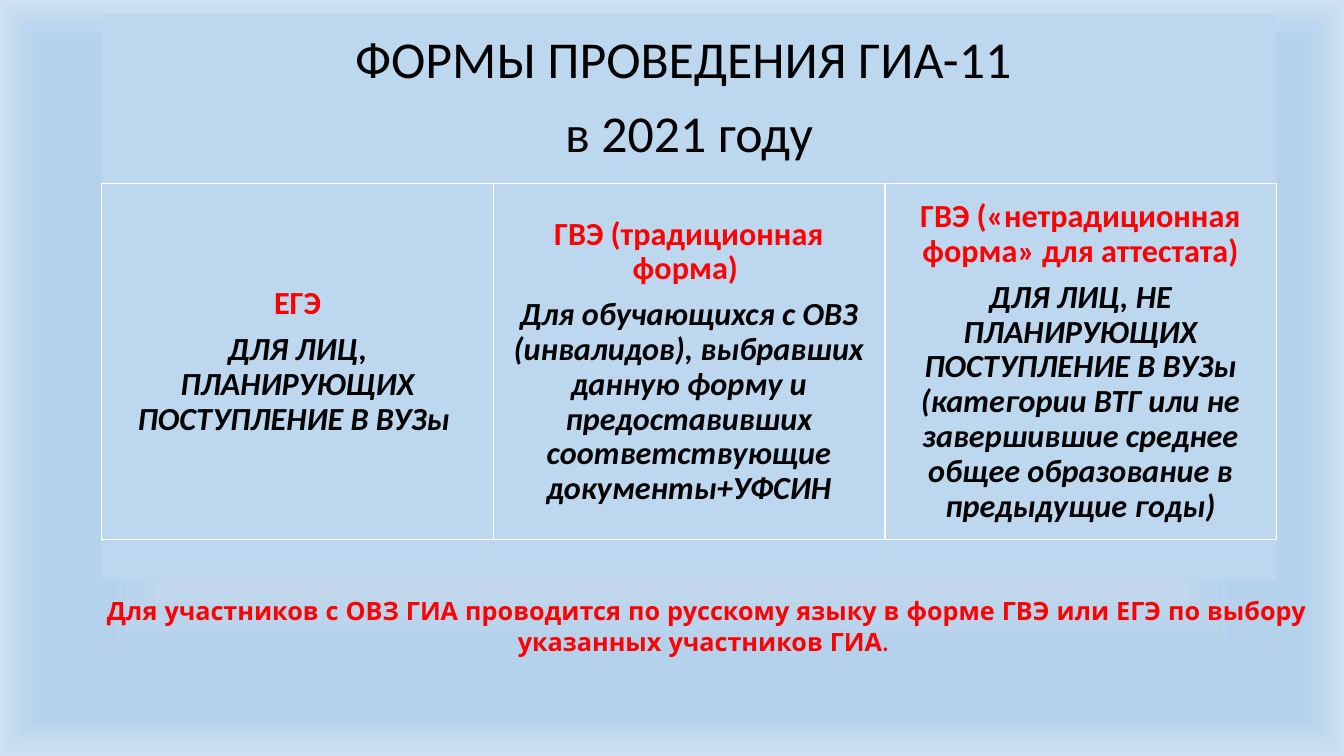
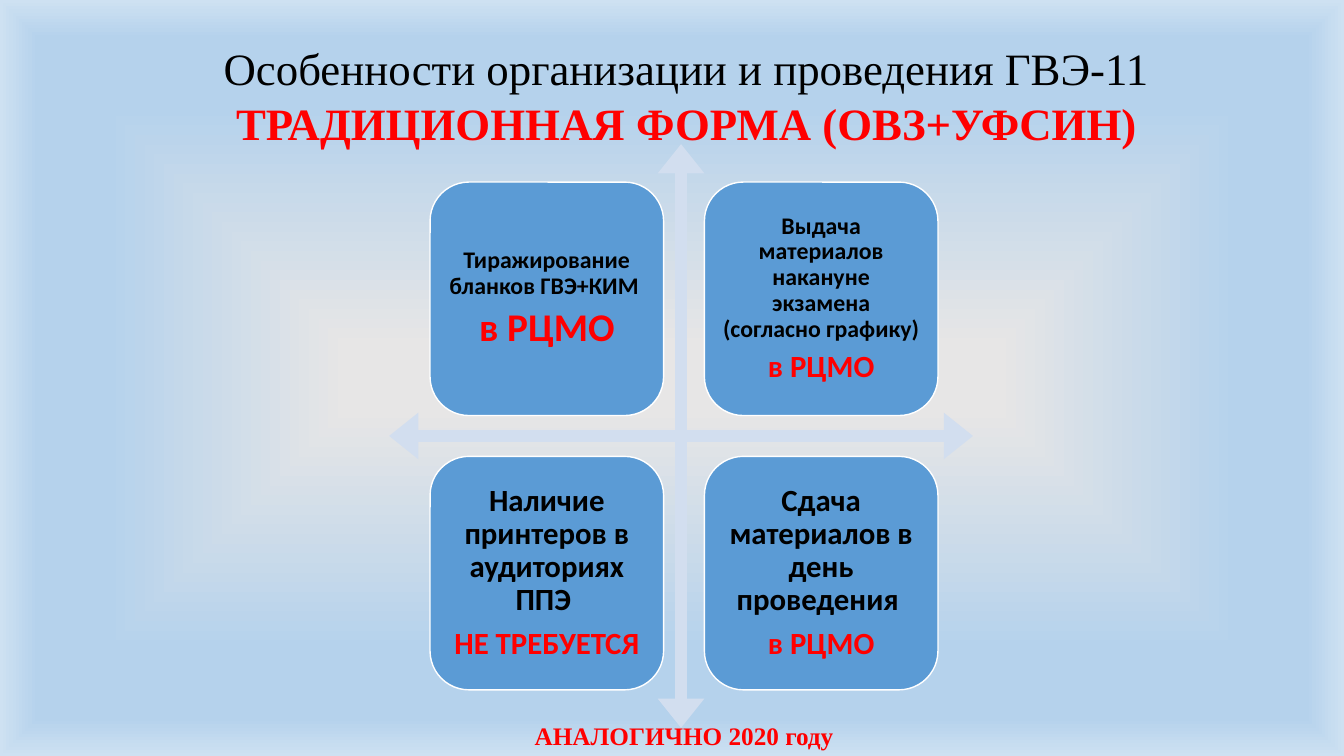
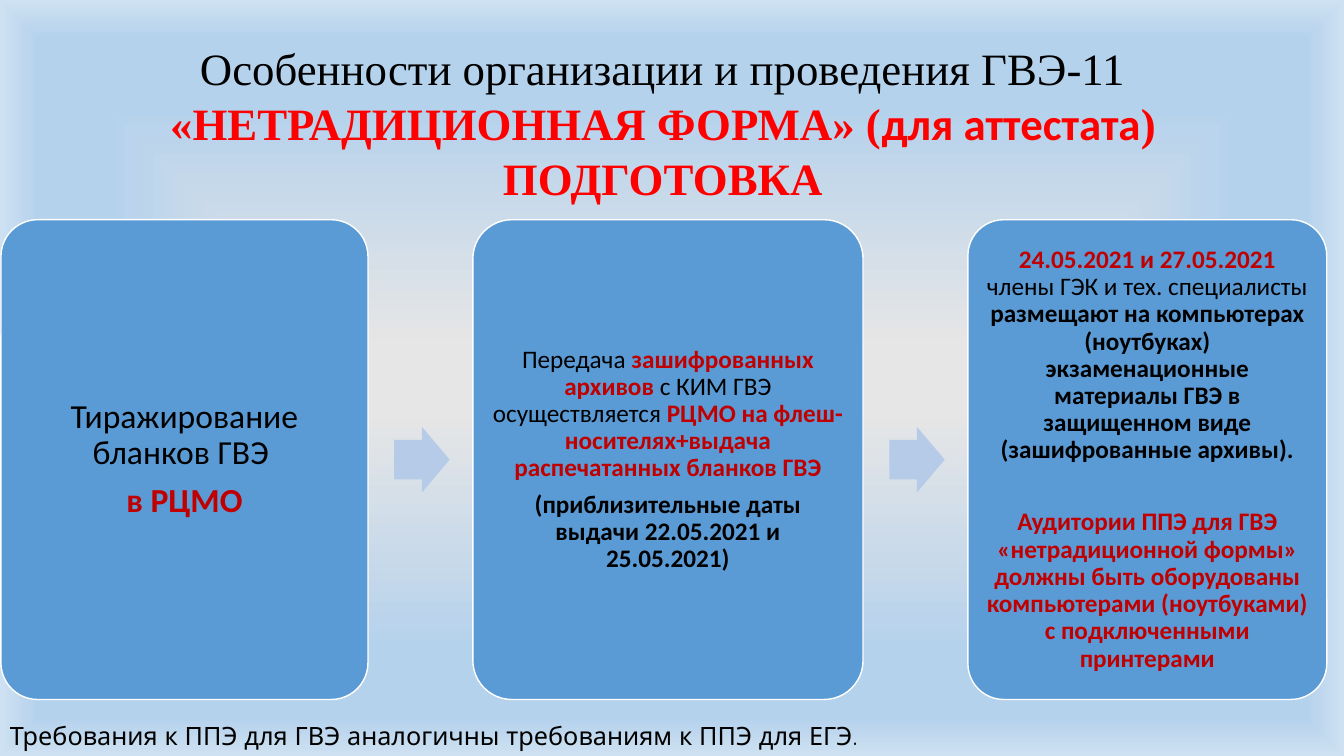
import pptx
import pptx.util
import pptx.dml.color
import pptx.enum.shapes
import pptx.enum.text
import pptx.oxml
import pptx.oxml.ns
from dataclasses import dataclass

Inch = pptx.util.Inches
Pt = pptx.util.Pt
Kind = pptx.enum.shapes.MSO_SHAPE
Align = pptx.enum.text.PP_ALIGN
Anchor = pptx.enum.text.MSO_ANCHOR


@dataclass(frozen=True)
class Theme:
    black: str = "000000"
    white: str = "FFFFFF"
    red: str = "FF0000"
    dark: str = "C00000"
    panel: str = "BDD7EE"
    card: str = "5B9BD5"
    cross: str = "D2DEEF"
    arrow: str = "B5CBE7"
    stops: tuple = ((8, "E7E6E6"), (72, "B5D2EC"), (90, "B5D2EC"), (100, "CEE1F2"))
    sans: str = "Calibri"
    serif: str = "Times New Roman"
    note: str = "Quicksand"
    banner: int = 37
    title: int = 32
    pitch: int = 39
    lead: int = 24
    col: int = 23
    big: int = 28
    mid: int = 22
    body: int = 18
    small: int = 17
    tight: float = 0.9
    after: float = 0.35


T = Theme()


@dataclass(frozen=True)
class Box:
    x: float
    y: float
    w: float
    h: float

    def inches(self):
        return [Inch(v) for v in (self.x, self.y, self.w, self.h)]


@dataclass(frozen=True)
class Run:
    text: str
    color: str = T.black
    bold: bool = False
    ital: bool = False
    size: int = 0
    face: str = ""


def paint(shape, fill, line=None):
    shape.shadow.inherit = False
    shape.fill.solid()
    shape.fill.fore_color.rgb = pptx.dml.color.RGBColor.from_string(fill)
    if line:
        shape.line.color.rgb = pptx.dml.color.RGBColor.from_string(line)
        shape.line.width = Pt(1)
    else:
        shape.line.fill.background()


def write(shape, paras, size, face=T.sans, pad=(0.1, 0.1), anchor=Anchor.MIDDLE,
          align=Align.CENTER, lines=T.tight, gap=None, wrap=True):
    frame = shape.text_frame
    frame.word_wrap = wrap
    frame.auto_size = pptx.enum.text.MSO_AUTO_SIZE.NONE
    frame.vertical_anchor = anchor
    frame.margin_left = frame.margin_right = Inch(pad[0])
    frame.margin_top = frame.margin_bottom = Inch(pad[1])
    for i, runs in enumerate(paras):
        para = frame.add_paragraph() if i else frame.paragraphs[0]
        para.alignment = align
        para.line_spacing = lines
        para.space_before = Pt(0)
        last = i == len(paras) - 1
        own = (runs[0].size or size) * T.after
        para.space_after = Pt(0 if last else own if gap is None else gap)
        for part in runs:
            run = para.add_run()
            run.text = part.text
            font = run.font
            font.name = part.face or face
            font.size = Pt(part.size or size)
            font.bold = part.bold
            font.italic = part.ital
            font.color.rgb = pptx.dml.color.RGBColor.from_string(part.color)


def place(slide, kind, box, fill, line=None, adjust=()):
    shape = slide.shapes.add_shape(kind, *box.inches())
    for i, value in enumerate(adjust):
        shape.adjustments[i] = value
    paint(shape, fill, line)
    return shape


def start(deck):
    return deck.slides.add_slide(deck.slide_layouts[5])


def head(slide, box):
    shape = slide.shapes.title
    shape.left, shape.top, shape.width, shape.height = box.inches()
    return shape


def title(slide, box, paras):
    write(head(slide, box), paras, T.title, T.serif, (0.1, 0),
          Anchor.TOP, lines=Pt(T.pitch), gap=0)


def note(slide, box, run, face, align=Align.CENTER, wrap=True):
    shape = slide.shapes.add_textbox(*box.inches())
    write(shape, [[run]], T.body, face, (0.1, 0.05), Anchor.TOP, align, 1.0, wrap=wrap)


def backdrop(deck):
    back = deck.slide_master.background
    back.fill.solid()
    solid = deck.slide_master.element.find(".//" + pptx.oxml.ns.qn("p:bgPr"))[0]
    stops = "".join(
        f'<a:gs pos="{pos * 1000}"><a:srgbClr val="{color}"/></a:gs>'
        for pos, color in T.stops)
    grad = pptx.oxml.parse_xml(
        f'<a:gradFill {pptx.oxml.ns.nsdecls("a")} rotWithShape="1">'
        f'<a:gsLst>{stops}</a:gsLst><a:path path="shape">'
        '<a:fillToRect l="50000" t="50000" r="50000" b="50000"/>'
        '</a:path></a:gradFill>')
    solid.getparent().replace(solid, grad)


def panel(slide, box, lines, cols):
    top, mid = 0.3 * box.h, 0.63 * box.h
    banner = head(slide, Box(box.x, box.y, box.w, top))
    paint(banner, T.panel)
    write(banner, [[Run(line)] for line in lines], T.banner, pad=(0.15, 0.15))
    wide = box.w / len(cols)
    for i, (name, text) in enumerate(cols):
        cell = Box(box.x + i * wide, box.y + top, wide, mid)
        shape = place(slide, Kind.RECTANGLE, cell, T.panel, T.white)
        write(shape, [[Run(name, T.red, True)], [Run(text, T.black, True, True)]], T.col)
    base = Box(box.x, box.y + top + mid, box.w, box.h - top - mid)
    place(slide, Kind.RECTANGLE, base, T.panel)


def matrix(slide, box, cards):
    place(slide, Kind.QUAD_ARROW, box, T.cross, adjust=(0.02, 0.04, 0.05))
    side, step = 0.4 * box.w, 0.47 * box.w
    for i, (text, size, mark, large) in enumerate(cards):
        row, col = divmod(i, 2)
        cell = Box(box.x + 0.07 * box.w + col * step,
                   box.y + 0.065 * box.h + row * step, side, side)
        shape = place(slide, Kind.ROUNDED_RECTANGLE, cell, T.card, T.white)
        pad = 0.07 if size == T.small else 0.09
        write(shape, [[Run(text, bold=True)], [Run(mark, T.red, True, size=large)]],
              size, pad=(pad, pad))


def flow(slide, box, steps):
    space, inset, wide, high = 1.04, 0.26, 0.55, 0.65
    x = box.x
    for i, (width, size, pad, gap, paras) in enumerate(steps):
        if i:
            spot = Box(x - space + inset, box.y + (box.h - high) / 2, wide, high)
            place(slide, Kind.RIGHT_ARROW, spot, T.arrow, adjust=(0.6, 0.5))
        shape = place(slide, Kind.ROUNDED_RECTANGLE, Box(x, box.y, width, box.h),
                      T.card, T.white, (0.1,))
        write(shape, paras, size, pad=(pad, pad), gap=gap)
        x += width + space


def forms(deck):
    slide = start(deck)
    panel(slide, Box(1.01, 0.14, 11.65, 5.61),
          ["ФОРМЫ ПРОВЕДЕНИЯ ГИА-11 ", "в 2021 году"],
          [("ЕГЭ", "ДЛЯ ЛИЦ, ПЛАНИРУЮЩИХ ПОСТУПЛЕНИЕ В ВУЗы "),
           ("ГВЭ (традиционная форма) ",
            "Для обучающихся с ОВЗ (инвалидов), выбравших данную форму "
            "и предоставивших соответствующие документы+УФСИН"),
           ("ГВЭ («нетрадиционная форма» для аттестата)",
            "ДЛЯ ЛИЦ, НЕ ПЛАНИРУЮЩИХ ПОСТУПЛЕНИЕ В ВУЗы (категории ВТГ или "
            "не завершившие среднее общее образование в предыдущие годы)")])
    note(slide, Box(0.69, 5.86, 12.64, 0.7),
         Run("Для участников с ОВЗ ГИА проводится по русскому языку в форме ГВЭ "
             "или ЕГЭ по выбору указанных участников ГИА. ", T.red, True), T.note)


TOPIC = [Run("Особенности организации и проведения ГВЭ-11")]


def usual(deck):
    slide = start(deck)
    title(slide, Box(0.86, 0.4, 11.9, 1.1),
          [TOPIC, [Run("ТРАДИЦИОННАЯ ФОРМА (ОВЗ+УФСИН)", T.red, True)]])
    matrix(slide, Box(3.86, 1.43, 5.79, 5.79), [
        ("Тиражирование бланков ГВЭ+КИМ ", T.small, "в РЦМО", T.big),
        ("Выдача материалов накануне экзамена (согласно графику)",
         T.small, "в РЦМО", T.mid),
        ("Наличие принтеров в аудиториях ППЭ ", T.mid, "НЕ ТРЕБУЕТСЯ", T.mid),
        ("Сдача материалов в день проведения ", T.mid, "в РЦМО", T.mid)])
    note(slide, Box(5.19, 7.1, 3.19, 0.4),
         Run("АНАЛОГИЧНО 2020 году", T.red, True), T.serif, wrap=False)


def novel(deck):
    slide = start(deck)
    title(slide, Box(0, 0.4, 13.15, 1.65), [
        TOPIC,
        [Run("«НЕТРАДИЦИОННАЯ ФОРМА» (", T.red, True),
         Run("для аттестата", T.red, True, face=T.sans),
         Run(")", T.red, True)],
        [Run("ПОДГОТОВКА", T.red, True)]])
    flow(slide, Box(0.01, 2.18, 13.16, 4.76), [
        (3.64, T.lead, 0.1, None,
         [[Run("Тиражирование бланков ГВЭ ")], [Run("в РЦМО", T.dark, True)]]),
        (3.87, T.body, 0.07, None,
         [[Run("Передача "),
           Run("зашифрованных архивов ", T.dark, True),
           Run("с КИМ ГВЭ осуществляется "),
           Run("РЦМО на флеш-носителях+выдача распечатанных бланков ГВЭ",
               T.dark, True)],
          [Run("(приблизительные даты выдачи 22.05.2021 и 25.05.2021)", bold=True)]]),
        (3.56, T.body, 0.07, 32,
         [[Run("24.05.2021 и 27.05.2021 ", T.dark, True),
           Run("члены ГЭК и тех. специалисты "),
           Run("размещают на компьютерах (ноутбуках) экзаменационные материалы ГВЭ "
               "в защищенном виде (зашифрованные архивы).", bold=True)],
          [Run("Аудитории ППЭ для ГВЭ «нетрадиционной формы» должны быть оборудованы "
               "компьютерами (ноутбуками) с подключенными принтерами",
               T.dark, True)]])])
    note(slide, Box(0, 7.1, 12.15, 0.4),
         Run("Требования к ППЭ для ГВЭ аналогичны требованиям к ППЭ для ЕГЭ."),
         T.note, Align.LEFT)


def main():
    deck = pptx.Presentation()
    deck.slide_width, deck.slide_height = Inch(13.33), Inch(7.5)
    backdrop(deck)
    for build in (forms, usual, novel):
        build(deck)
    deck.save("out.pptx")


if __name__ == "__main__":
    main()
